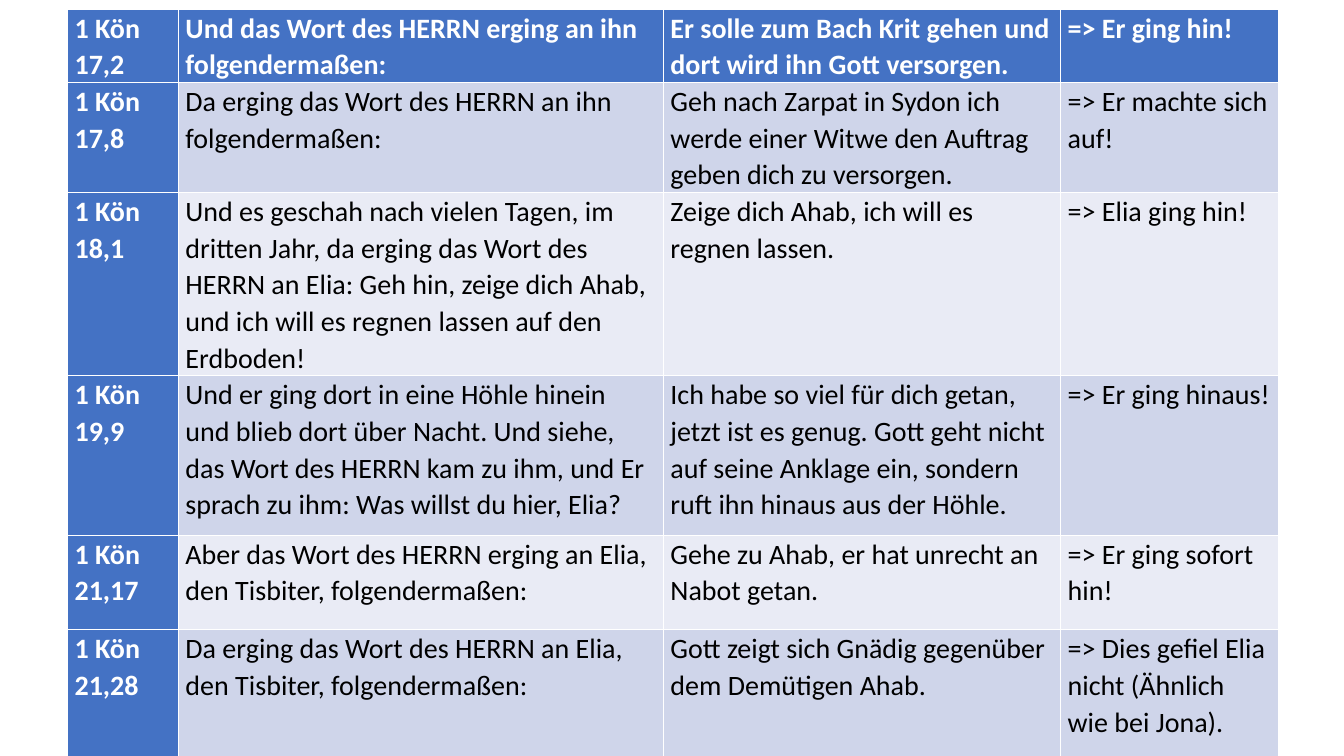
from pptx import Presentation
from pptx.dml.color import RGBColor
from pptx.util import Inches, Pt

BLANK_LAYOUT = 6
FONT = "Calibri"
BLUE, WHITE, BLACK = "4472C4", "FFFFFF", "000000"
BANDS = ["E9EBF5", "CFD5EA"]

COLUMN_WIDTHS = [1.1, 4.81, 3.94, 2.16]
ROW_HEIGHTS = [0.62, 0.94, 1.26, 1.58, 0.94, 1.26]

# Verse, wording, message, response of Elia
ROWS = [
    ("1 Kön 17,2",
     "Und das Wort des HERRN erging an ihn folgendermaßen:",
     "Er solle zum Bach Krit gehen und dort wird ihn Gott versorgen.",
     "=> Er ging hin!"),
    ("1 Kön 17,8",
     "Da erging das Wort des HERRN an ihn folgendermaßen:",
     "Geh nach Zarpat in Sydon ich werde einer Witwe den Auftrag geben dich zu versorgen.",
     "=> Er machte sich auf!"),
    ("1 Kön 18,1",
     "Und es geschah nach vielen Tagen, im dritten Jahr, da erging das Wort des HERRN an Elia: "
     "Geh hin, zeige dich Ahab, und ich will es regnen lassen auf den Erdboden!",
     "Zeige dich Ahab, ich will es regnen lassen.",
     "=> Elia ging hin!"),
    ("1 Kön 19,9",
     "Und er ging dort in eine Höhle hinein und blieb dort über Nacht. Und siehe, "
     "das Wort des HERRN kam zu ihm, und Er sprach zu ihm: Was willst du hier, Elia?",
     "Ich habe so viel für dich getan, jetzt ist es genug. Gott geht nicht auf seine Anklage ein, "
     "sondern ruft ihn hinaus aus der Höhle.",
     "=> Er ging hinaus!"),
    ("1 Kön 21,17",
     "Aber das Wort des HERRN erging an Elia, den Tisbiter, folgendermaßen:",
     "Gehe zu Ahab, er hat unrecht an Nabot getan.",
     "=> Er ging sofort hin!"),
    ("1 Kön 21,28",
     "Da erging das Wort des HERRN an Elia, den Tisbiter, folgendermaßen:",
     "Gott zeigt sich Gnädig gegenüber dem Demütigen Ahab.",
     "=> Dies gefiel Elia nicht (Ähnlich wie bei Jona)."),
]


def color(value):
    return RGBColor.from_string(value)


presentation = Presentation()
presentation.slide_width = Inches(13.33)
presentation.slide_height = Inches(7.5)
slide = presentation.slides.add_slide(presentation.slide_layouts[BLANK_LAYOUT])

# The default table style supplies the white grid and the thick line below the header
table = slide.shapes.add_table(
    len(ROWS), len(COLUMN_WIDTHS), Inches(0.67), Inches(0.09),
    Inches(sum(COLUMN_WIDTHS)), Inches(sum(ROW_HEIGHTS))).table
table.first_col = True
for column, width in zip(table.columns, COLUMN_WIDTHS):
    column.width = Inches(width)

for row_index, texts in enumerate(ROWS):
    row = table.rows[row_index]
    row.height = Inches(ROW_HEIGHTS[row_index])
    for column_index, text in enumerate(texts):
        is_header = row_index == 0 or column_index == 0
        cell = row.cells[column_index]
        cell.margin_left = cell.margin_right = Inches(0.07)
        cell.margin_top = cell.margin_bottom = 0
        cell.fill.solid()
        cell.fill.fore_color.rgb = color(BLUE if is_header else BANDS[row_index % 2])
        cell.text_frame.text = text
        paragraph = cell.text_frame.paragraphs[0]
        paragraph.line_spacing = 1.07
        font = paragraph.runs[0].font
        font.name = FONT
        font.size = Pt(20)
        font.bold = is_header
        font.color.rgb = color(WHITE if is_header else BLACK)

presentation.save("out.pptx")
